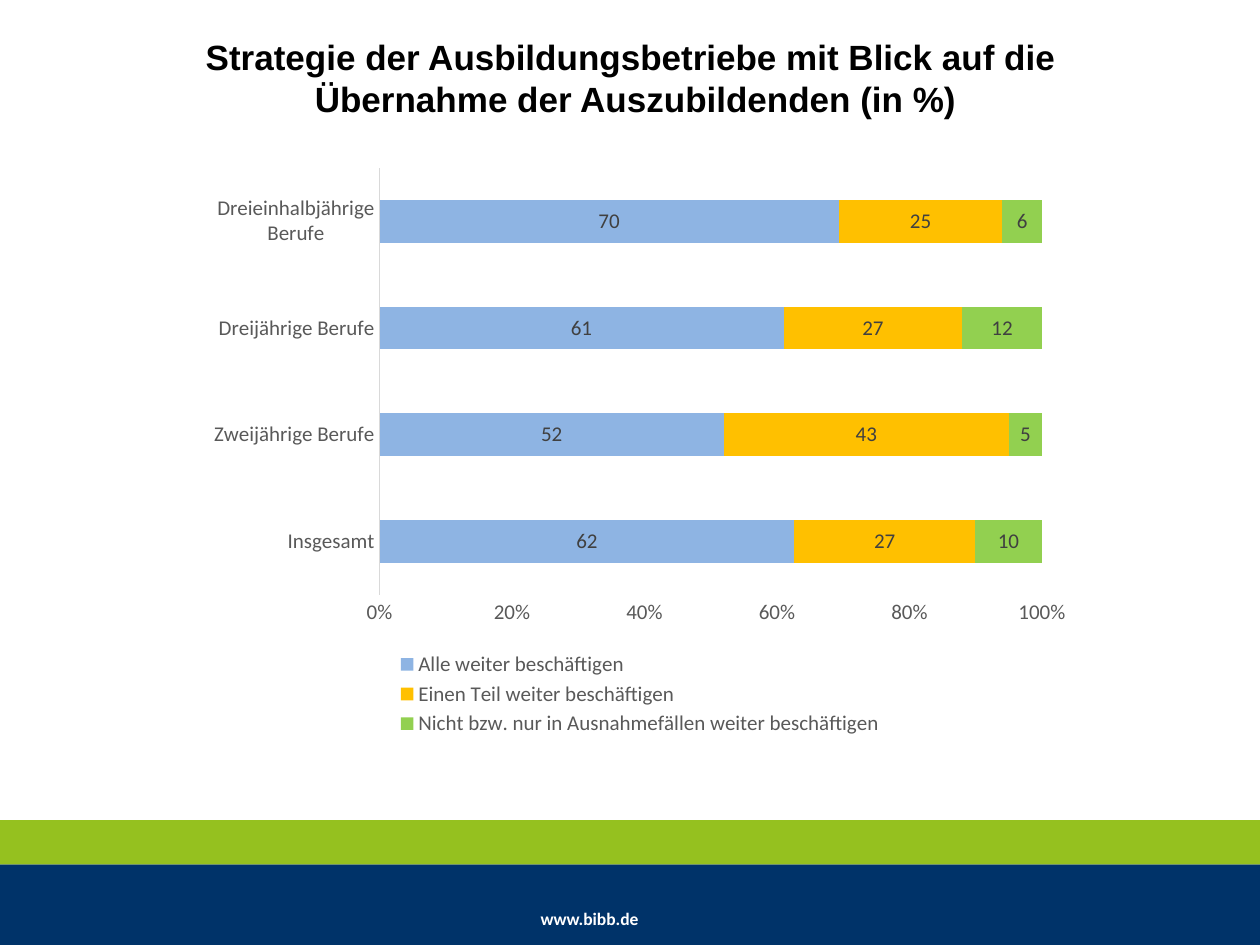
import pptx
import pptx.chart.data
import pptx.dml.color
import pptx.enum.chart
import pptx.enum.shapes
import pptx.enum.text
import pptx.oxml
import pptx.oxml.ns
import pptx.util
from pptx.util import Inches

COLORS = {
    "navy": "003369", "green": "95C11F", "white": "FFFFFF", "black": "000000",
    "axis_text": "595959", "axis_line": "D9D9D9", "label": "404040",
}
CATEGORIES = ["Insgesamt", "Zweijährige Berufe", "Dreijährige Berufe",
              "Dreieinhalbjährige Berufe"]
SERIES = [
    ("Alle weiter beschäftigen", [62, 52, 61, 70], "8EB4E3"),
    ("Einen Teil weiter beschäftigen", [27, 43, 27, 25], "FFC000"),
    ("Nicht bzw. nur in Ausnahmefällen weiter beschäftigen", [10, 5, 12, 6], "92D050"),
]


def rgb(color):
    return pptx.dml.color.RGBColor.from_string(color)


def format_font(font, size, color, name="Calibri", bold=False):
    font.size = pptx.util.Pt(size)
    font.color.rgb = rgb(color)
    font.name = name
    font.bold = bold


def add_title(slide, left, top, width, height):
    title = slide.shapes.title
    title.left, title.top, title.width, title.height = left, top, width, height
    frame = title.text_frame
    frame.text = "Strategie der Ausbildungsbetriebe mit Blick auf die \vÜbernahme der Auszubildenden (in %)"
    frame.word_wrap = True
    frame.auto_size = pptx.enum.text.MSO_AUTO_SIZE.NONE
    frame.vertical_anchor = pptx.enum.text.MSO_ANCHOR.TOP
    paragraph = frame.paragraphs[0]
    paragraph.alignment = pptx.enum.text.PP_ALIGN.CENTER
    for run in paragraph.runs:
        format_font(run.font, 20, COLORS["black"], "Arial", True)


def set_layout(element, index, x, y, w, h, inner=False):
    """Place a chart part by fractions of the chart's width and height."""
    for old in element.findall(pptx.oxml.ns.qn("c:layout")):
        element.remove(old)
    target = '<c:layoutTarget val="inner"/>' if inner else ""
    element.insert(index, pptx.oxml.parse_xml(
        f'<c:layout {pptx.oxml.ns.nsdecls("c")}><c:manualLayout>{target}'
        '<c:xMode val="edge"/><c:yMode val="edge"/>'
        f'<c:x val="{x}"/><c:y val="{y}"/><c:w val="{w}"/><c:h val="{h}"/>'
        '</c:manualLayout></c:layout>'))


def format_axes(chart):
    for axis in (chart.category_axis, chart.value_axis):
        axis.major_tick_mark = axis.minor_tick_mark = pptx.enum.chart.XL_TICK_MARK.NONE
        axis.has_major_gridlines = False
        format_font(axis.tick_labels.font, 12, COLORS["axis_text"])
    line = chart.category_axis.format.line
    line.color.rgb = rgb(COLORS["axis_line"])
    line.width = pptx.util.Pt(0.75)
    value_axis = chart.value_axis
    value_axis.format.line.fill.background()
    value_axis.minimum_scale, value_axis.maximum_scale = 0, 1
    value_axis.major_unit = 0.2
    value_axis.tick_labels.number_format = "0%"
    value_axis.tick_labels.number_format_is_linked = False


def format_bars(plot):
    plot.gap_width = 150
    plot.overlap = 100
    plot.vary_by_categories = False
    for series, (_, _, color) in zip(plot.series, SERIES):
        series.format.fill.solid()
        series.format.fill.fore_color.rgb = rgb(color)
        labels = series.data_labels
        labels.show_value = True
        labels.position = pptx.enum.chart.XL_LABEL_POSITION.CENTER
        labels.number_format = "#,##0"
        labels.number_format_is_linked = False
        format_font(labels.font, 12, COLORS["label"])


def add_strategy_chart(slide, left, top, width, height):
    data = pptx.chart.data.CategoryChartData(number_format="#,##0")
    data.categories = CATEGORIES
    for name, values, _ in SERIES:
        data.add_series(name, values)
    chart = slide.shapes.add_chart(
        pptx.enum.chart.XL_CHART_TYPE.BAR_STACKED_100, left, top, width, height, data).chart
    chart.has_title = False
    format_font(chart.font, 10, COLORS["black"])
    format_axes(chart)
    format_bars(chart.plots[0])

    chart.has_legend = True
    legend = chart.legend
    legend.position = pptx.enum.chart.XL_LEGEND_POSITION.BOTTOM
    legend.include_in_layout = False
    format_font(legend.font, 12, COLORS["axis_text"])
    plot_area = chart.element.find(".//" + pptx.oxml.ns.qn("c:plotArea"))
    legend_area = chart.element.find(".//" + pptx.oxml.ns.qn("c:legend"))
    set_layout(plot_area, 0, 0.21, 0.02, 0.75, 0.73, inner=True)
    set_layout(legend_area, 1, 0.22, 0.84, 0.57, 0.16)


def add_band(slide, left, top, width, height, color):
    band = slide.shapes.add_shape(
        pptx.enum.shapes.MSO_SHAPE.RECTANGLE, left, top, width, height)
    band.shadow.inherit = False
    band.fill.solid()
    band.fill.fore_color.rgb = rgb(color)
    band.line.fill.background()


def add_footer(slide, left, top, width, height):
    green_height = Inches(0.35)
    add_band(slide, left, top + green_height, width, height - green_height, COLORS["navy"])
    add_band(slide, left, top, width, green_height, COLORS["green"])
    address = slide.shapes.add_textbox(
        left + Inches(4.29), top + Inches(0.7), Inches(1.02), Inches(0.17))
    frame = address.text_frame
    frame.margin_left = frame.margin_right = frame.margin_top = frame.margin_bottom = 0
    frame.word_wrap = True
    frame.text = "www.bibb.de"
    format_font(frame.paragraphs[0].runs[0].font, 10, COLORS["white"], bold=True)


def main():
    presentation = pptx.Presentation()
    presentation.slide_width, presentation.slide_height = Inches(10), Inches(7.5)
    slide = presentation.slides.add_slide(presentation.slide_layouts.get_by_name("Title Only"))
    add_footer(slide, 0, Inches(6.51), Inches(10), Inches(0.99))
    add_title(slide, Inches(0.52), Inches(0.23), Inches(9.05), Inches(0.78))
    add_strategy_chart(slide, Inches(1.54), Inches(1.24), Inches(7.01), Inches(4.64))
    presentation.save("out.pptx")


if __name__ == "__main__":
    main()
